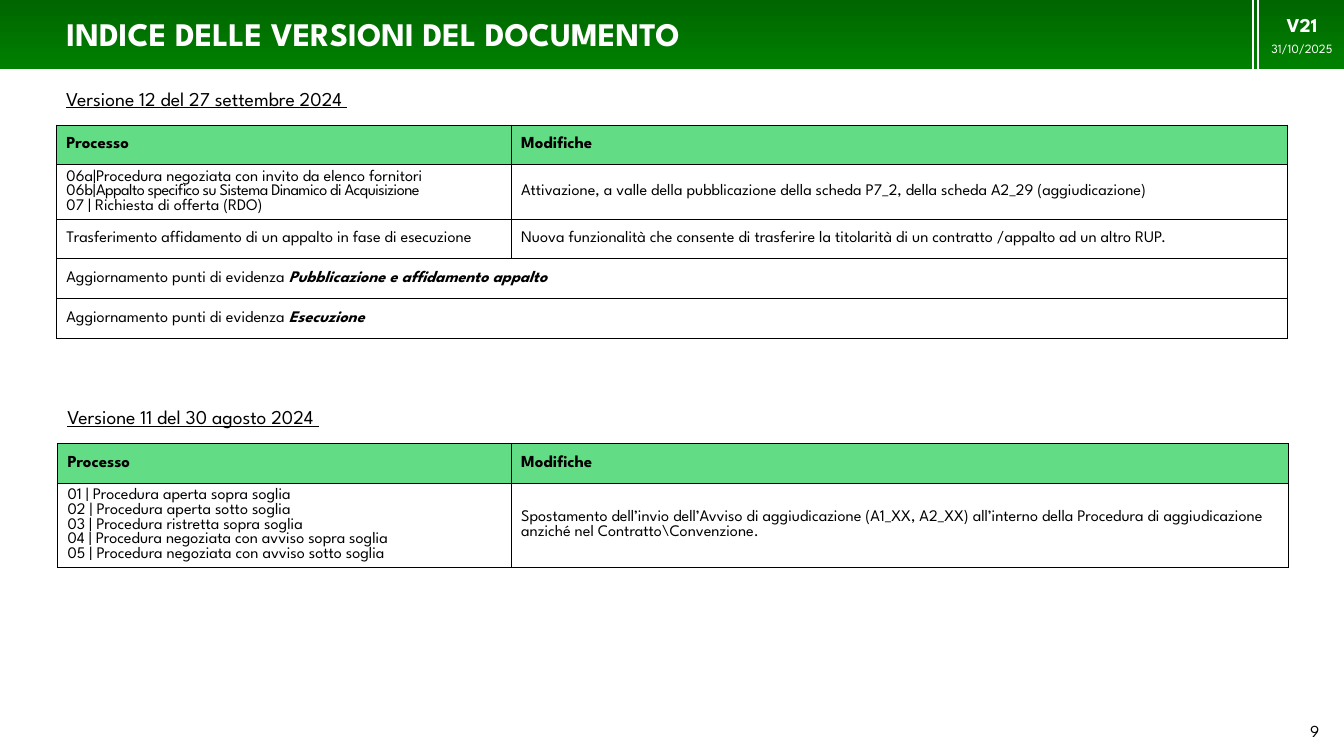
from dataclasses import dataclass

from lxml.etree import SubElement
from pptx import Presentation
from pptx.dml.color import RGBColor
from pptx.enum.shapes import MSO_CONNECTOR, MSO_SHAPE
from pptx.enum.text import MSO_ANCHOR, MSO_AUTO_SIZE, PP_ALIGN
from pptx.oxml import parse_xml
from pptx.oxml.ns import nsdecls, qn
from pptx.util import Cm, Pt


@dataclass(frozen=True)
class Theme:
    font: str = "League Spartan"
    black: str = "000000"
    white: str = "FFFFFF"
    band_top: str = "006600"
    band_bottom: str = "008000"
    header: str = "63DC86"
    title_size: float = 23.5
    heading_size: float = 14
    header_size: float = 12
    body_size: float = 11.5
    date_size: float = 9
    border: float = 0.75
    rule: float = 1.5


class VersionSlide:
    def __init__(self, presentation, theme):
        self.theme = theme
        self.slide = presentation.slides.add_slide(presentation.slide_layouts[5])

    def set_frame(self, shape, **values):
        formats = {"word_wrap": True, "auto_size": MSO_AUTO_SIZE.NONE,
                   "vertical_anchor": MSO_ANCHOR.MIDDLE} | values
        for name, value in formats.items():
            setattr(shape.text_frame, name, value)

    def add_runs(self, paragraph, runs, color=None, spacing=0, **base):
        for text, extra in runs:
            run = paragraph.add_run()
            run.text = text
            formats = {"name": self.theme.font, "bold": False} | base | extra
            tracking = formats.pop("tracking", None)
            for name, value in formats.items():
                setattr(run.font, name, Pt(value) if name == "size" else value)
            run.font.color.rgb = RGBColor.from_string(color or self.theme.black)
            if tracking:
                run.font._element.set("spc", str(tracking))
        paragraph.space_after = Pt(spacing)

    def title(self, text, left, top, width, height):
        title = self.slide.shapes.title
        box = {"left": left, "top": top, "width": width, "height": height}
        for name, value in box.items():
            setattr(title, name, Cm(value))
        self.set_frame(title)
        paragraph = title.text_frame.paragraphs[0]
        paragraph.alignment = PP_ALIGN.LEFT
        paragraph.line_spacing = 0.9
        self.add_runs(paragraph, [(text, {})], self.theme.white,
                      size=self.theme.title_size, bold=True)

    def band(self, width, height):
        band = self.slide.shapes.add_shape(MSO_SHAPE.RECTANGLE, 0, 0, Cm(width), Cm(height))
        band.shadow.inherit = False
        band.line.fill.background()
        band.fill.gradient()
        band.fill.gradient_angle = 270
        for stop, color in zip(band.fill.gradient_stops,
                               (self.theme.band_top, self.theme.band_bottom)):
            stop.color.rgb = RGBColor.from_string(color)
        self.slide.shapes.title.element.addprevious(band.element)

    def rules(self, positions, height):
        group = self.slide.shapes.add_group_shape()
        for left in positions:
            rule = group.shapes.add_connector(
                MSO_CONNECTOR.STRAIGHT, Cm(left), 0, Cm(left), Cm(height))
            rule.line.color.rgb = RGBColor.from_string(self.theme.white)
            rule.line.width = Pt(self.theme.rule)
            SubElement(rule.element.spPr, qn("a:effectLst"))

    def badge(self, version, date, left, width, height):
        badge = self.slide.shapes.add_shape(
            MSO_SHAPE.ROUNDED_RECTANGLE, Cm(left), 0, Cm(width), Cm(height))
        badge.adjustments[0] = 0
        badge.shadow.inherit = False
        badge.fill.background()
        badge.line.fill.background()
        self.set_frame(badge, margin_left=0, margin_right=0, margin_top=0, margin_bottom=0)
        first = badge.text_frame.paragraphs[0]
        second = badge.text_frame.add_paragraph()
        first.alignment = second.alignment = PP_ALIGN.CENTER
        self.add_runs(first, [(version, {})], self.theme.white, 3,
                      size=self.theme.heading_size, bold=True)
        self.add_runs(second, [(date, {})], self.theme.white, size=self.theme.date_size)

    def text(self, text, left, top, width, height, alignment=PP_ALIGN.LEFT, **formats):
        box = self.slide.shapes.add_textbox(Cm(left), Cm(top), Cm(width), Cm(height))
        self.set_frame(box)
        paragraph = box.text_frame.paragraphs[0]
        paragraph.alignment = alignment
        self.add_runs(paragraph, [(text, {})], **formats)

    def cell(self, cell, paragraphs, is_header):
        theme = self.theme
        cell.vertical_anchor = MSO_ANCHOR.MIDDLE
        cell.fill.solid()
        cell.fill.fore_color.rgb = RGBColor.from_string(theme.header if is_header else theme.white)
        properties = cell._tc.get_or_add_tcPr()
        for index, side in enumerate(("lnL", "lnR", "lnT", "lnB")):
            properties.insert(index, parse_xml(
                f'<a:{side} {nsdecls("a")} w="{Pt(theme.border)}"><a:solidFill>'
                f'<a:srgbClr val="{theme.black}"/></a:solidFill></a:{side}>'))
        for index, runs in enumerate(paragraphs):
            frame = cell.text_frame
            paragraph = frame.add_paragraph() if index else frame.paragraphs[0]
            self.add_runs(paragraph, runs, bold=is_header,
                          size=theme.header_size if is_header else theme.body_size)

    def table(self, rows, left, top, widths, heights):
        table = self.slide.shapes.add_table(
            len(rows), len(widths), Cm(left), Cm(top), Cm(sum(widths)), Cm(sum(heights))).table
        table.horz_banding = False
        for column, width in zip(table.columns, widths):
            column.width = Cm(width)
        for row, (contents, height) in enumerate(zip(rows, heights)):
            table.rows[row].height = Cm(height)
            if len(contents) < len(widths):
                table.cell(row, 0).merge(table.cell(row, len(widths) - 1))
            for column in range(len(widths)):
                paragraphs = contents[column] if column < len(contents) else []
                self.cell(table.cell(row, column), paragraphs, row == 0)


def lines(*texts):
    return [[(text, {})] for text in texts]


def evidence(name):
    return [[[("Aggiornamento punti di evidenza ", {}), (name, {"bold": True, "italic": True})]]]


HEADER = [lines("Processo"), lines("Modifiche")]
VERSION_12 = [
    HEADER,
    [[[("06a|Procedura negoziata con invito da elenco fornitori", {})],
      [("06b|", {}),
       ("Appalto specifico su Sistema Dinamico di Acquisizione", {"tracking": -40})],
      [("07 | Richiesta di offerta (RDO)", {})]],
     lines("Attivazione, a valle della pubblicazione della scheda P7_2, "
           "della scheda A2_29 (aggiudicazione)")],
    [lines("Trasferimento affidamento di un appalto in fase di esecuzione"),
     lines("Nuova funzionalità che consente di trasferire la titolarità "
           "di un contratto /appalto ad un altro RUP.")],
    evidence("Pubblicazione e affidamento appalto"),
    evidence("Esecuzione"),
]
VERSION_11 = [
    HEADER,
    [lines("01 | Procedura aperta sopra soglia",
           "02 | Procedura aperta sotto soglia",
           "03 | Procedura ristretta sopra soglia",
           "04 | Procedura negoziata con avviso sopra soglia",
           "05 | Procedura negoziata con avviso sotto soglia"),
     lines("Spostamento dell’invio dell’Avviso di aggiudicazione (A1_XX, A2_XX) all’interno "
           "della Procedura di aggiudicazione anziché nel Contratto\\Convenzione.")],
]


def main():
    presentation = Presentation()
    presentation.slide_width, presentation.slide_height = Cm(33.87), Cm(19.05)
    theme = Theme()
    page = VersionSlide(presentation, theme)
    page.title("INDICE DELLE VERSIONI DEL DOCUMENTO", 1.42, 0.2, 31, 1.4)
    page.band(33.87, 1.75)
    page.rules((31.57, 31.7), 1.9)
    page.badge("V21", "31/10/2025", 31.75, 2.12, 1.73)
    page.text("9", 25.88, 17.9, 7.62, 1.02, PP_ALIGN.RIGHT, size=theme.header_size)
    for heading, rows, left, top, widths, heights in (
        ("Versione 12 del 27 settembre 2024 ", VERSION_12, 1.42, 1.96,
         (11.46, 19.56), (1, 1.36, 1, 1, 1)),
        ("Versione 11 del 30 agosto 2024 ", VERSION_11, 1.45, 9.98,
         (11.43, 19.58), (1, 2.13)),
    ):
        page.text(heading, left, top, 12.27, 1.04, size=theme.heading_size, underline=True)
        page.table(rows, left, top + 1.19, widths, heights)
    presentation.save("out.pptx")


if __name__ == "__main__":
    main()
